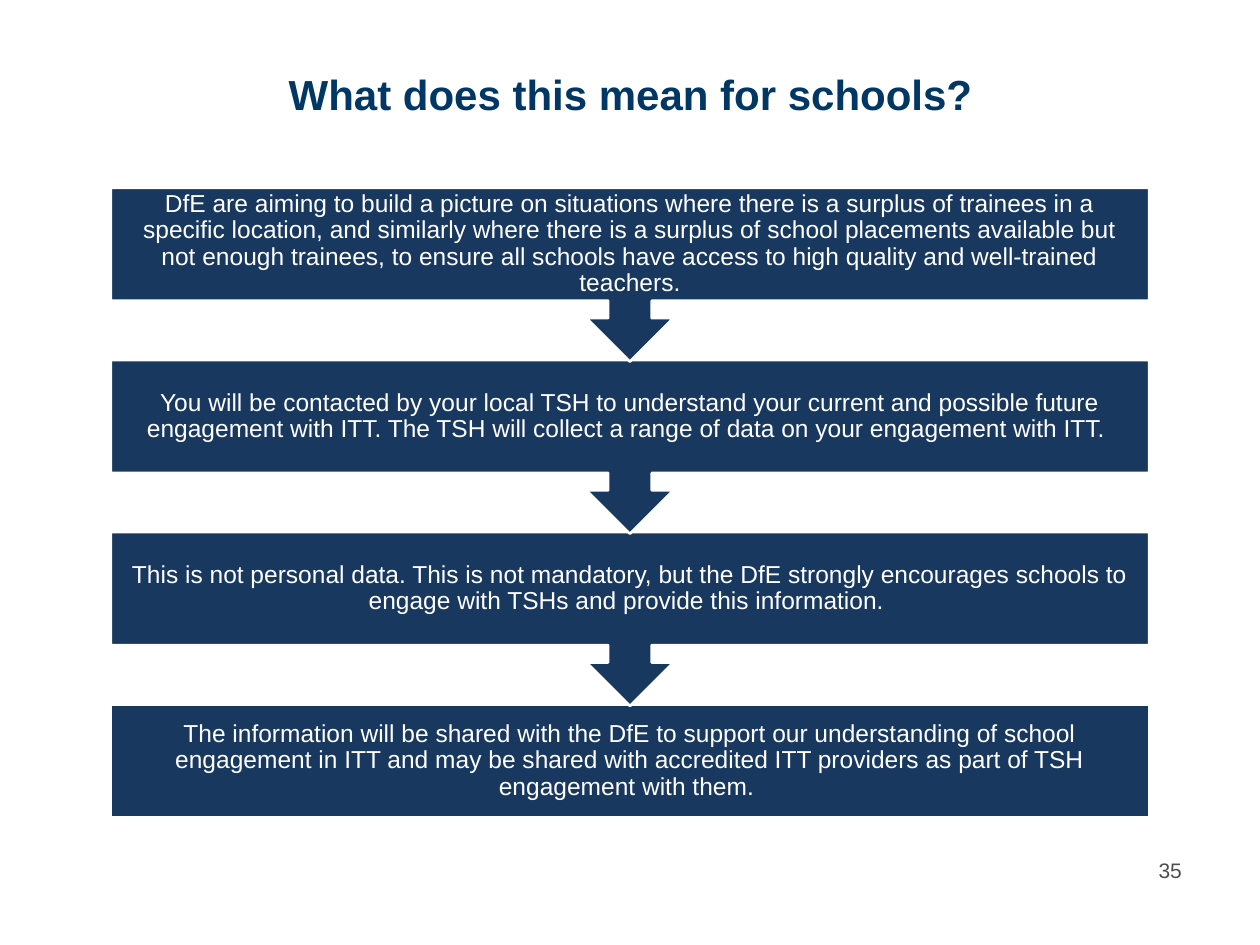
from pptx import Presentation
from pptx.dml.color import RGBColor
from pptx.enum.shapes import MSO_SHAPE
from pptx.enum.text import MSO_ANCHOR, PP_ALIGN
from pptx.util import Inches, Pt

NAVY, TITLE_BLUE, GREY, WHITE = "183860", "003764", "4D4D4D", "FFFFFF"
STEPS = [
    "DfE are aiming to build a picture on situations where there is a surplus of trainees in a "
    "specific location, and similarly where there is a surplus of school placements available but "
    "not enough trainees, to ensure all schools have access to high quality and well-trained teachers.",
    "You will be contacted by your local TSH to understand your current and possible future "
    "engagement with ITT. The TSH will collect a range of data on your engagement with ITT. ",
    "This is not personal data. This is not mandatory, but the DfE strongly encourages schools to "
    "engage with TSHs and provide this information. ",
    "The information will be shared with the DfE to support our understanding of school "
    "engagement in ITT and may be shared with accredited ITT providers as part of TSH "
    "engagement with them. ",
]


def color(hex_string):
    """Return the colour for a hex string."""
    return RGBColor.from_string(hex_string)


def write(sp, text, size=14, fill=WHITE, bold=False, align=PP_ALIGN.CENTER,
          anchor=MSO_ANCHOR.MIDDLE, inset=0.0):
    """Write one formatted paragraph into a shape."""
    tf = sp.text_frame
    tf.word_wrap = True
    tf.vertical_anchor = anchor
    tf.margin_left = tf.margin_right = tf.margin_top = tf.margin_bottom = Inches(inset)
    p = tf.paragraphs[0]
    p.alignment, p.line_spacing = align, 0.9
    r = p.add_run()
    r.text = text
    r.font.name, r.font.size, r.font.bold = "Arial", Pt(size), bold
    r.font.color.rgb = color(fill)


def add_title(s, text, left, top, width, height):
    """Place and format the title placeholder."""
    sp = s.shapes.title
    sp.left, sp.top, sp.width, sp.height = map(Inches, (left, top, width, height))
    write(sp, text, size=24, fill=TITLE_BLUE, bold=True, anchor=MSO_ANCHOR.TOP)


def add_process(s, steps, left, top, width, height, box_height=0.9, callout_height=1.38):
    """Stack the steps as arrow callouts that end in a plain box."""
    pitch = (height - box_height) / (len(steps) - 1)
    last = len(steps) - 1
    for i in range(last, -1, -1):
        kind, h = ((MSO_SHAPE.RECTANGLE, box_height) if i == last
                   else (MSO_SHAPE.DOWN_ARROW_CALLOUT, callout_height))
        sp = s.shapes.add_shape(kind, Inches(left), Inches(top + i * pitch), Inches(width), Inches(h))
        sp.shadow.inherit = False
        sp.fill.solid()
        sp.fill.fore_color.rgb = color(NAVY)
        sp.line.color.rgb = color(WHITE)
        sp.line.width = Pt(1.5)
        write(sp, steps[i], inset=0.11)


def add_page_number(s, number, left, top, width, height):
    """Add the right-aligned page number."""
    sp = s.shapes.add_textbox(*map(Inches, (left, top, width, height)))
    write(sp, number, size=12, fill=GREY, align=PP_ALIGN.RIGHT, anchor=MSO_ANCHOR.TOP)


def main():
    """Build and save the slide."""
    prs = Presentation()
    prs.slide_width, prs.slide_height = Inches(10), Inches(7.5)
    s = prs.slides.add_slide(prs.slide_layouts[5])
    add_title(s, "What does this mean for schools?", 0.63, 0.59, 8.75, 0.56)
    add_process(s, STEPS, 0.88, 1.49, 8.24, 5.0)
    add_page_number(s, "35", 8.76, 6.83, 0.62, 0.2)
    prs.save("out.pptx")


if __name__ == "__main__":
    main()
